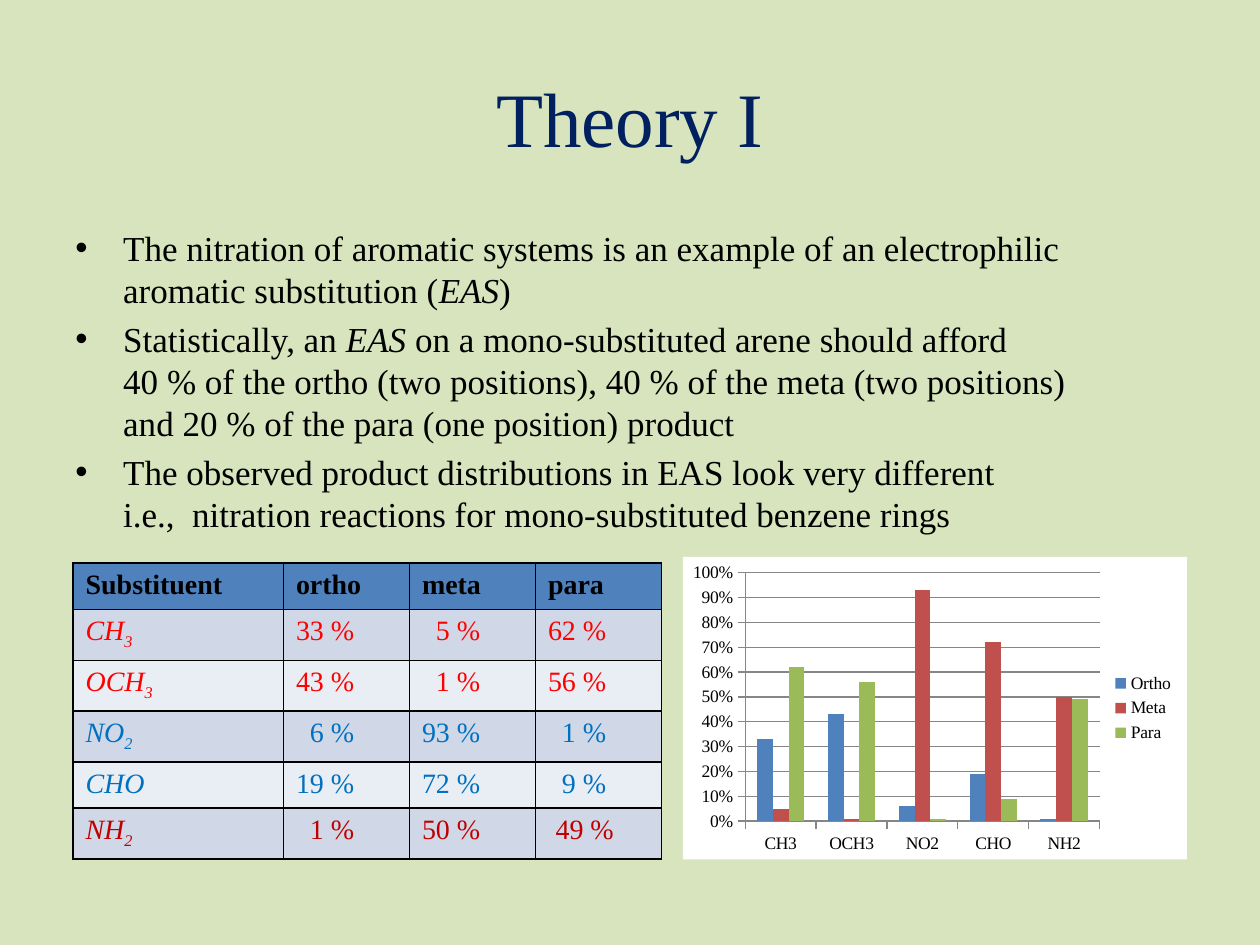
from pptx import Presentation
from pptx.chart.data import CategoryChartData as ChartData
from pptx.dml.color import RGBColor
from pptx.enum.chart import XL_CHART_TYPE as ChartType, XL_LEGEND_POSITION as LegendPosition
from pptx.enum.chart import XL_TICK_MARK as TickMark
from pptx.enum.text import MSO_ANCHOR as Anchor, PP_ALIGN as Align
from pptx.oxml import parse_xml
from pptx.oxml.ns import nsdecls
from pptx.util import Inches, Pt

FONT = "Times New Roman"
BLACK = RGBColor(0x00, 0x00, 0x00)
WHITE = RGBColor(0xFF, 0xFF, 0xFF)
GRAY = RGBColor(0x86, 0x86, 0x86)
NAVY = RGBColor(0x00, 0x20, 0x60)
RED = RGBColor(0xFF, 0x00, 0x00)
DARK_RED = RGBColor(0xC0, 0x00, 0x00)
BLUE = RGBColor(0x00, 0x70, 0xC0)
PALE_GREEN = RGBColor(0xD7, 0xE4, 0xBD)
HEADER_BLUE = RGBColor(0x4F, 0x81, 0xBD)
BANDS = [RGBColor(0xD0, 0xD8, 0xE8), RGBColor(0xE9, 0xED, 0xF4)]
SERIES_COLORS = [HEADER_BLUE, RGBColor(0xC0, 0x50, 0x4D), RGBColor(0x9B, 0xBB, 0x59)]

POSITIONS = ["ortho", "meta", "para"]
YIELDS = [
    ("CH3", RED, [33, 5, 62]),
    ("OCH3", RED, [43, 1, 56]),
    ("NO2", BLUE, [6, 93, 1]),
    ("CHO", BLUE, [19, 72, 9]),
    ("NH2", DARK_RED, [1, 50, 49]),
]
BULLETS = [
    [("The nitration of aromatic systems is an example of an electrophilic aromatic substitution (", False),
     ("EAS", True), (")", False)],
    [("Statistically, an ", False), ("EAS", True),
     (" on a mono-substituted arene should afford \n40 % of the ortho (two positions), "
      "40 % of the meta (two positions) \nand 20 % of the para (one position) product", False)],
    [("The observed product distributions in EAS look very different \n"
      "i.e.,  nitration reactions for mono-substituted benzene rings", False)],
]


def write(paragraph, text, size=20, color=BLACK, bold=False, italic=False, baseline=None):
    """Add formatted text to a paragraph, turning newlines into line breaks."""
    for index, line in enumerate(text.split("\n")):
        if index:
            paragraph.add_line_break()
        run = paragraph.add_run()
        run.text = line
        font = run.font
        font.name, font.size, font.bold, font.italic = FONT, Pt(size), bold, italic
        font.color.rgb = color
        if baseline is not None:
            font._element.set("baseline", str(baseline))


class SlideBuilder:
    """Hold the slide and its style, and add each kind of element."""

    def __init__(self, presentation, background):
        self.slide = presentation.slides.add_slide(presentation.slide_layouts[6])
        fill = self.slide.background.fill
        fill.solid()
        fill.fore_color.rgb = background

    def text_frame(self, left, top, width, height):
        box = self.slide.shapes.add_textbox(Inches(left), Inches(top), Inches(width), Inches(height))
        box.text_frame.word_wrap = True
        return box.text_frame

    def title(self, text, *bounds):
        frame = self.text_frame(*bounds)
        frame.vertical_anchor = Anchor.MIDDLE
        paragraph = frame.paragraphs[0]
        paragraph.alignment = Align.CENTER
        write(paragraph, text, size=44, color=NAVY)

    def bullets(self, items, *bounds):
        frame = self.text_frame(*bounds)
        indent = Inches(0.38)
        for index, pieces in enumerate(items):
            paragraph = frame.add_paragraph() if index else frame.paragraphs[0]
            paragraph.space_before = Pt(4)
            properties = paragraph._p.get_or_add_pPr()
            properties.set("marL", str(indent))
            properties.set("indent", str(-indent))
            properties.append(parse_xml(f'<a:buFont {nsdecls("a")} typeface="Arial"/>'))
            properties.append(parse_xml(f'<a:buChar {nsdecls("a")} char="•"/>'))
            for text, italic in pieces:
                write(paragraph, text, italic=italic)

    def cell(self, cell, fill, indent=0.0):
        properties = cell._tc.get_or_add_tcPr()
        for side in "LRTB":
            properties.append(parse_xml(
                f'<a:ln{side} {nsdecls("a")} w="{Pt(1)}"><a:solidFill>'
                f'<a:srgbClr val="{BLACK}"/></a:solidFill></a:ln{side}>'))
        cell.fill.solid()
        cell.fill.fore_color.rgb = fill
        cell.margin_left = Inches(0.1 + indent)
        return cell.text_frame.paragraphs[0]

    def yield_table(self, left, top, widths, row_height):
        rows = len(YIELDS) + 1
        table = self.slide.shapes.add_table(
            rows, len(widths), Inches(left), Inches(top),
            Inches(sum(widths)), Inches(rows * row_height)).table
        for column, width in zip(table.columns, widths):
            column.width = Inches(width)
        for row in table.rows:
            row.height = Inches(row_height)
        for column, heading in enumerate(["Substituent"] + POSITIONS):
            write(self.cell(table.cell(0, column), HEADER_BLUE), heading, size=16, bold=True)
        for row, (formula, color, values) in enumerate(YIELDS, start=1):
            band = BANDS[(row - 1) % 2]
            letters = formula.rstrip("23")
            paragraph = self.cell(table.cell(row, 0), band)
            write(paragraph, letters, size=16, color=color, italic=True)
            if letters != formula:
                write(paragraph, formula[len(letters):], size=16, color=color, italic=True, baseline=-25000)
            for column, value in enumerate(values, start=1):
                indent = 0.11 if value < 10 else 0.06 if value == 49 else 0
                write(self.cell(table.cell(row, column), band, indent), f"{value} %", size=16, color=color)

    def yield_chart(self, left, top, width, height):
        data = ChartData(number_format="0%")
        data.categories = [formula for formula, _, _ in YIELDS]
        for index, position in enumerate(POSITIONS):
            data.add_series(position.title(), [values[index] / 100 for _, _, values in YIELDS])
        chart = self.slide.shapes.add_chart(
            ChartType.COLUMN_CLUSTERED, Inches(left), Inches(top), Inches(width), Inches(height), data).chart
        chart.has_title = False
        chart.font.name, chart.font.size = FONT, Pt(10)
        chart.font.color.rgb = BLACK
        chart._chartSpace.find("{*}txPr").addprevious(parse_xml(
            f'<c:spPr {nsdecls("c", "a")}><a:solidFill><a:srgbClr val="{WHITE}"/></a:solidFill>'
            '<a:ln><a:noFill/></a:ln></c:spPr>'))
        chart.has_legend = True
        chart.legend.position = LegendPosition.RIGHT
        chart.legend.include_in_layout = False
        plot = chart.plots[0]
        plot.gap_width, plot.overlap, plot.vary_by_categories = 150, 0, False
        for series, color in zip(plot.series, SERIES_COLORS):
            series.format.fill.solid()
            series.format.fill.fore_color.rgb = color
        axis = chart.value_axis
        axis.minimum_scale, axis.maximum_scale, axis.major_unit = 0, 1, 0.1
        axis.has_major_gridlines = True
        axis.tick_labels.number_format = "0%"
        axis.tick_labels.number_format_is_linked = False
        for line_owner in (axis, axis.major_gridlines, chart.category_axis):
            line_owner.format.line.color.rgb = GRAY
            line_owner.format.line.width = Pt(0.75)
        for each_axis in (axis, chart.category_axis):
            each_axis.major_tick_mark = TickMark.OUTSIDE


def main():
    presentation = Presentation()
    presentation.slide_width, presentation.slide_height = Inches(10), Inches(7.5)
    builder = SlideBuilder(presentation, PALE_GREEN)
    builder.title("Theory I", 0.5, 0.3, 9, 1.25)
    builder.bullets(BULLETS, 0.5, 1.75, 9, 4.95)
    builder.yield_table(0.58, 4.47, [1.67, 1, 1, 1], 0.35)
    builder.yield_chart(5.42, 4.42, 4, 2.4)
    presentation.save("out.pptx")


if __name__ == "__main__":
    main()
